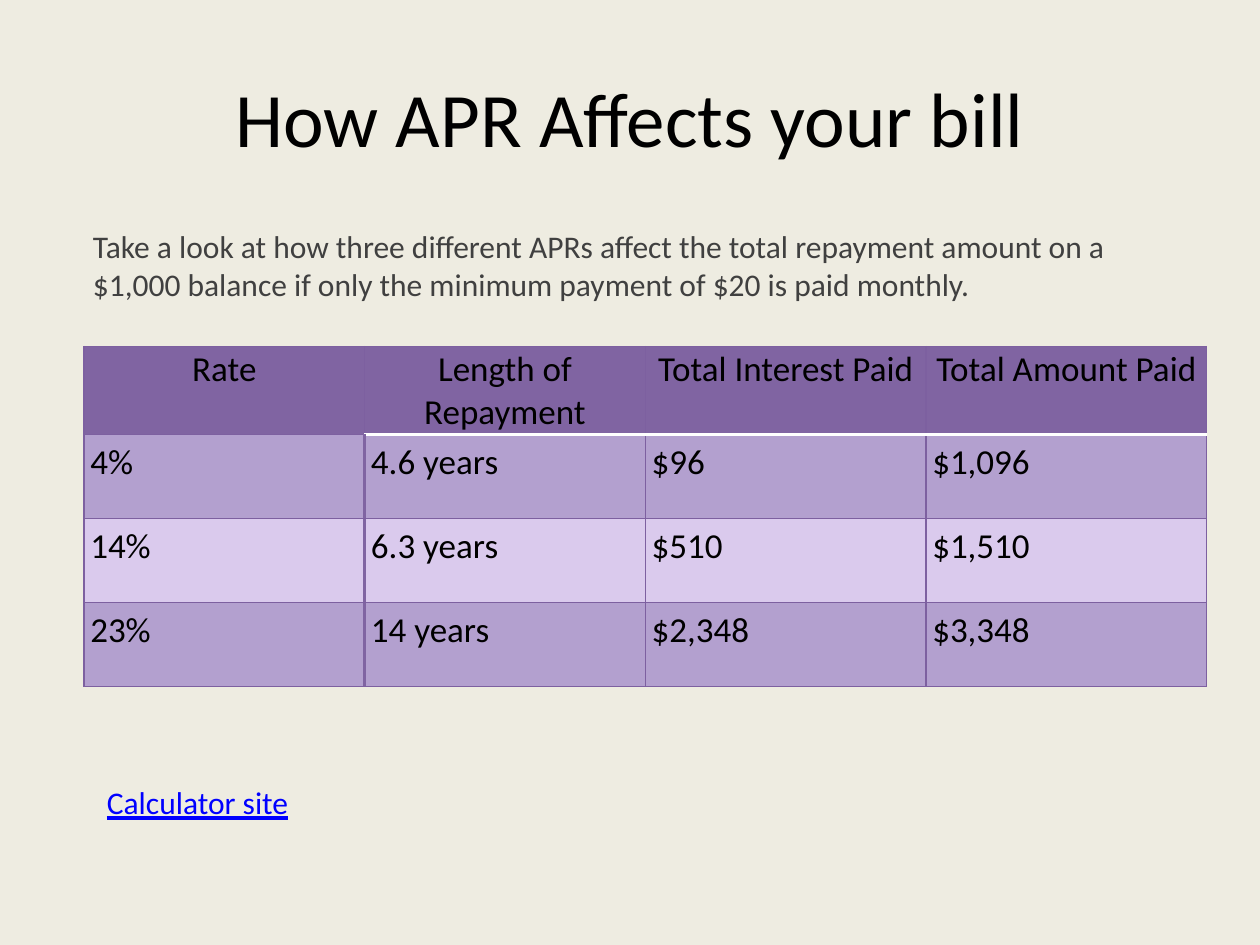
from lxml.etree import SubElement
from pptx import Presentation
from pptx.dml.color import RGBColor
from pptx.enum.text import MSO_ANCHOR, MSO_AUTO_SIZE, PP_ALIGN
from pptx.oxml.ns import qn
from pptx.util import Pt

HEAD, EDGE, BAND, PALE, WHITE = "8064A2", "7D60A0", "B3A0CF", "DACAED", "FFFFFF"
ROWS = [
    ["Rate", "Length of Repayment", "Total Interest Paid", "Total Amount Paid"],
    ["4%", "4.6 years", "$96", "$1,096"],
    ["14%", "6.3 years", "$510", "$1,510"],
    ["23%", "14 years", "$2,348", "$3,348"],
]


def color(code):
    return RGBColor.from_string(code)


def border(cell, side, code, width):
    line = SubElement(cell._tc.get_or_add_tcPr(), qn(f"a:ln{side}"), w=str(Pt(width)))
    fill = SubElement(line, qn("a:solidFill"))
    SubElement(fill, qn("a:srgbClr"), val=code)


def edges(row, col):
    thin, thick = (EDGE, 0.75), (HEAD, 2)
    rule = (WHITE, 2) if col else thin
    return {
        "L": thick if row and col == 1 else thin,
        "R": thick if row and col == 0 else thin,
        "T": rule if row == 1 else thin,
        "B": rule if row == 0 else thin,
    }


class Deck:
    font = "Calibri"

    def __init__(self):
        self.file = Presentation()
        self.file.slide_width, self.file.slide_height = Pt(720), Pt(540)
        self.slide = self.file.slides.add_slide(self.file.slide_layouts[5])
        back = self.slide.background.fill
        back.solid()
        back.fore_color.rgb = color("EEECE1")

    def put(self, frame, text, size, code, align=PP_ALIGN.LEFT):
        frame.text = text
        frame.word_wrap = True
        para = frame.paragraphs[0]
        para.alignment = align
        font = para.font
        font.name, font.size, font.bold = self.font, Pt(size), False
        font.color.rgb = color(code)
        return font

    def title(self, text, box):
        shape = self.slide.shapes.title
        shape.left, shape.top, shape.width, shape.height = map(Pt, box)
        frame = shape.text_frame
        frame.vertical_anchor = MSO_ANCHOR.MIDDLE
        self.put(frame, text, 44, "000000", PP_ALIGN.CENTER)

    def text(self, text, box, code, under=False):
        frame = self.slide.shapes.add_textbox(*map(Pt, box)).text_frame
        font = self.put(frame, text, 18, code)
        font.underline = under
        frame.auto_size = MSO_AUTO_SIZE.SHAPE_TO_FIT_TEXT

    def table(self, rows, box, tall):
        shape = self.slide.shapes.add_table(len(rows), len(rows[0]), *map(Pt, box))
        table = shape.table
        table.horz_banding = False
        for line, height in zip(table.rows, tall):
            line.height = Pt(height)
        for r, row in enumerate(rows):
            for c, text in enumerate(row):
                self.cell(table.cell(r, c), text, r, c)

    def cell(self, cell, text, row, col):
        pad = Pt(3.6 if row else 0.75)
        cell.margin_left = cell.margin_right = pad
        cell.margin_top = cell.margin_bottom = pad
        align = PP_ALIGN.LEFT if row else PP_ALIGN.CENTER
        self.put(cell.text_frame, text, 20, "000000", align)
        for side, style in edges(row, col).items():
            border(cell, side, *style)
        cell.fill.solid()
        shade = HEAD if row == 0 else BAND if row % 2 else PALE
        cell.fill.fore_color.rgb = color(shade)


def main():
    deck = Deck()
    deck.title("How APR Affects your bill", (36, 21.6, 648, 90))
    deck.table(ROWS, (48, 198, 641.6, 194), (50, 48, 48, 48))
    deck.text(
        "Take a look at how three different APRs affect the total repayment amount "
        "on a $1,000 balance if only the minimum payment of $20 is paid monthly.",
        (46, 126, 644, 51), "404040")
    deck.text("Calculator site", (54, 444, 228, 30), "0000FF", under=True)
    deck.file.save("out.pptx")


if __name__ == "__main__":
    main()
